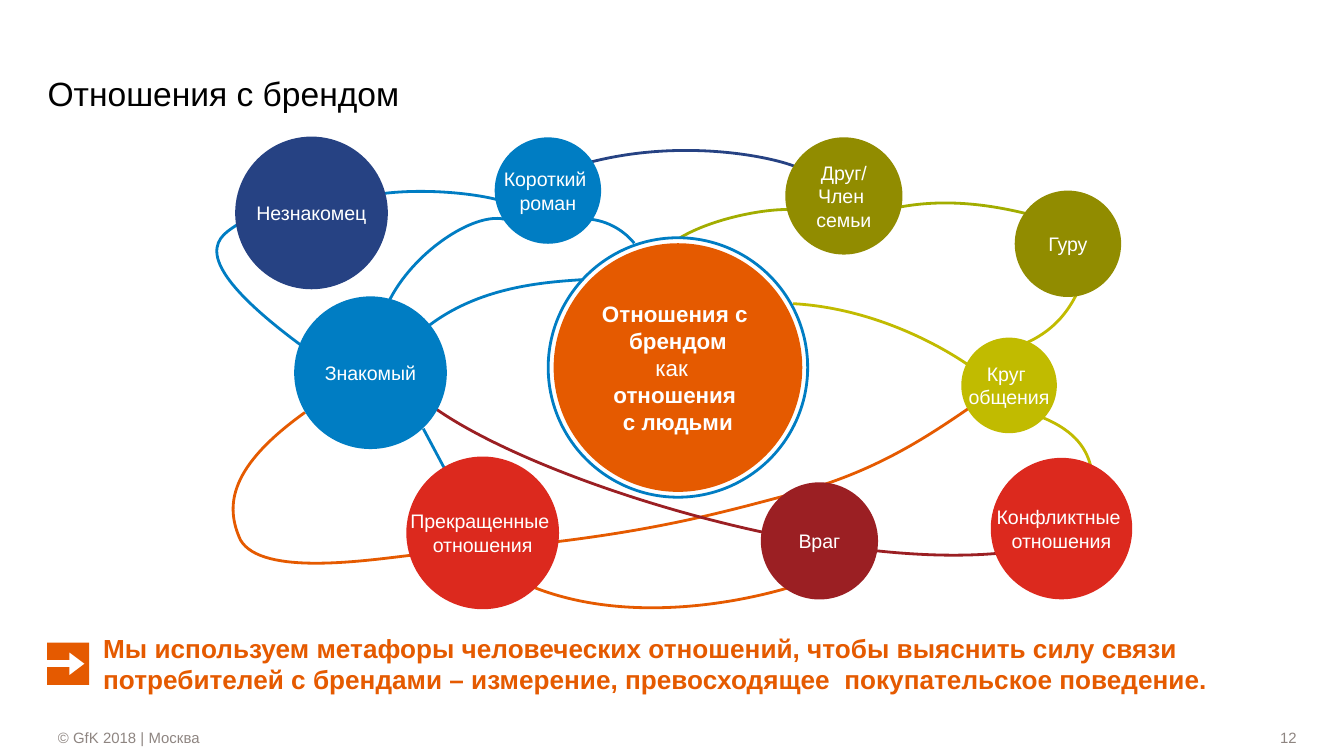
import pptx
import pptx.util
import pptx.dml.color
import pptx.enum.shapes
import pptx.enum.text
import pptx.oxml.ns
from dataclasses import dataclass
from lxml import etree

Pt = pptx.util.Pt
Shape = pptx.enum.shapes.MSO_SHAPE
Align = pptx.enum.text.PP_ALIGN
Anchor = pptx.enum.text.MSO_ANCHOR
qn = pptx.oxml.ns.qn


@dataclass(frozen=True)
class Theme:
    font: str = "Arial"
    white: str = "FFFFFF"
    black: str = "000000"
    grey: str = "8E8581"
    orange: str = "E55A00"
    navy: str = "264283"
    blue: str = "007DC3"
    red: str = "DC291E"
    maroon: str = "9B1F23"
    olive: str = "918C00"
    green: str = "A2AD00"
    lime: str = "C1BB00"
    title_size: float = 18
    message_size: float = 14
    hub_size: float = 12
    node_size: float = 10.5
    footer_size: float = 8
    curve_width: float = 1.5
    arrow_width: float = 4


THEME = Theme()

NODES = [
    ("Конфликтные \nотношения", 452.7, 211.2, 75.8, THEME.red),
    ("Гуру", 456.1, 58.6, 57, THEME.olive),
    ("Друг/\nЧлен \nсемьи", 336.1, 33, 62.8, THEME.olive),
    ("Враг", 323, 217.8, 62.8, THEME.maroon),
    ("Круг \nобщения", 424.6, 134.5, 51.2, THEME.lime),
    ("Прекращенные \nотношения", 142.6, 213.5, 81.8, THEME.red),
    ("Знакомый", 82.5, 127.7, 81.8, THEME.blue),
    ("Незнакомец", 50.9, 42.1, 81.8, THEME.navy),
    ("Короткий \nроман", 177.5, 30.1, 57, THEME.blue),
]

HUB_CENTER = (247.2, 124.9)
HUB_DIAMETER = 133.2
RING_DIAMETER = 139
HUB_RUNS = [
    ("Отношения с \nбрендом\n", True),
    ("как  \n", False),
    ("отношения \nс людьми", True),
]

CURVES = [
    (THEME.orange, [(47.4, 149), (7.1, 177.8), (4.2, 198.7), (12.9, 217.4),
                    (24.4, 236.9), (80.6, 228.2), (105, 225.4),
                    (221.7, 217.4), (263.4, 204.5), (315.3, 190.8),
                    (354.9, 179.3), (380.8, 162), (403.8, 146.2)]),
    (THEME.blue, [(45.3, 113), (-21.7, 63.4), (3.5, 54), (11.4, 48.2)]),
    (THEME.blue, [(89.2, 31.7), (112.2, 28.8), (138.9, 31.7), (151.8, 35.3)]),
    (THEME.blue, [(92.1, 90), (105, 63.4), (137.4, 41.8), (154, 45.4)]),
    (THEME.navy, [(199.4, 15.1), (248.3, 2.2), (295.8, 11.5), (310.2, 17.3)]),
    (THEME.blue, [(200.1, 45.4), (213, 46.8), (221, 54.7), (223.8, 58.3)]),
    (THEME.blue, [(112.2, 103.7), (140.3, 81.4), (175.6, 79.2), (196.5, 77.8)]),
    (THEME.blue, [(110.8, 157.7), (122.3, 179.3)]),
    (THEME.maroon, [(117.3, 146.9), (171.3, 185), (321.8, 232.6), (417.5, 224.6)]),
    (THEME.orange, [(169.8, 242.6), (221, 262.8), (280.7, 250.6), (307.4, 242.6)]),
    (THEME.lime, [(441.3, 151.2), (461.4, 159.1), (466.5, 169.9), (468.6, 178.6)]),
    (THEME.lime, [(308.8, 90.7), (349.1, 92.9), (384.4, 110.9), (403.1, 123.8)]),
    (THEME.lime, [(432.6, 112.3), (447.8, 105.8), (455.7, 95.8), (460.7, 85.7)]),
    (THEME.green, [(434.1, 42.5), (419, 38.9), (393.8, 33.8), (366.4, 38.9)]),
    (THEME.green, [(248.3, 55.4), (264.9, 45.4), (293, 39.6), (308.1, 40.3)]),
]


def rgb(color):
    return pptx.dml.color.RGBColor.from_string(color)


def add_text(paragraph, text, size, color, bold=False):
    for index, line in enumerate(text.split("\n")):
        if index:
            paragraph.add_line_break()
        if line:
            run = paragraph.add_run()
            run.text = line
            run.font.name = THEME.font
            run.font.size = Pt(size)
            run.font.bold = bold
            run.font.color.rgb = rgb(color)


def write(holder, runs, size, color, anchor, align=Align.LEFT, margins=(0, 0), wrap=True):
    frame = holder.text_frame
    frame.margin_left = frame.margin_right = Pt(margins[0])
    frame.margin_top = frame.margin_bottom = Pt(margins[1])
    frame.vertical_anchor = anchor
    frame.word_wrap = wrap
    paragraph = frame.paragraphs[0]
    paragraph.alignment = align
    for text, bold in runs:
        add_text(paragraph, text, size, color, bold)


def add_preset(slide, kind, box, fill=None, outline=None):
    preset = slide.shapes.add_shape(kind, *map(Pt, box))
    preset.shadow.inherit = False
    if fill:
        preset.fill.solid()
        preset.fill.fore_color.rgb = rgb(fill)
    else:
        preset.fill.background()
    if outline:
        preset.line.color.rgb = rgb(outline)
        preset.line.width = Pt(THEME.curve_width)
    else:
        preset.line.fill.background()
    return preset


def add_circle(slide, center, diameter, fill=None, outline=None):
    box = (center[0] - diameter / 2, center[1] - diameter / 2, diameter, diameter)
    return add_preset(slide, Shape.OVAL, box, fill, outline)


def add_node(slide, center, diameter, fill, runs, size):
    write(add_circle(slide, center, diameter, fill), runs, size, THEME.white,
          Anchor.MIDDLE, Align.CENTER, (0, 3.6), wrap=False)


def curve_bounds(controls, steps=60):
    points = [controls[0], controls[-1]]
    for first in range(0, len(controls) - 3, 3):
        for step in range(steps + 1):
            t = step / steps
            weights = ((1 - t) ** 3, 3 * t * (1 - t) ** 2, 3 * t * t * (1 - t), t ** 3)
            points.append([sum(w * p[axis] for w, p in zip(weights, controls[first:first + 4]))
                           for axis in (0, 1)])
    xs, ys = zip(*points)
    return min(xs), min(ys), max(xs), max(ys)


def bend(curve, controls):
    left, top, right, bottom = map(Pt, curve_bounds(controls))
    curve.left, curve.top = left, top
    curve.width, curve.height = right - left, bottom - top
    outline = next(curve.element.iter(qn("a:path")))
    outline.set("w", str(right - left))
    outline.set("h", str(bottom - top))
    for segment in list(outline):
        outline.remove(segment)
    for index, (x, y) in enumerate(controls):
        if index == 0:
            segment = etree.SubElement(outline, qn("a:moveTo"))
        elif index % 3 == 1:
            segment = etree.SubElement(outline, qn("a:cubicBezTo"))
        etree.SubElement(segment, qn("a:pt"), x=str(Pt(x) - left), y=str(Pt(y) - top))


def add_curve(slide, controls, color):
    points = [(Pt(x), Pt(y)) for x, y in controls]
    builder = slide.shapes.build_freeform(*points[0], scale=1.0)
    builder.add_line_segments(points[1:], close=False)
    curve = builder.convert_to_shape()
    if len(controls) > 2:
        bend(curve, controls)
    curve.shadow.inherit = False
    curve.fill.background()
    curve.line.color.rgb = rgb(color)
    curve.line.width = Pt(THEME.curve_width)


def relationship_map(slide, left, top):
    def place(point):
        return left + point[0], top + point[1]

    for color, controls in CURVES:
        add_curve(slide, [place(point) for point in controls], color)
    for text, x, y, diameter, fill in NODES:
        add_node(slide, place((x, y)), diameter, fill, [(text, False)], THEME.node_size)
    hub = place(HUB_CENTER)
    add_node(slide, hub, HUB_DIAMETER, THEME.orange, HUB_RUNS, THEME.hub_size)
    add_circle(slide, hub, RING_DIAMETER, outline=THEME.blue)


def title(slide, left, top, width, height):
    heading = slide.shapes.add_textbox(*map(Pt, (left, top, width, height)))
    write(heading, [("Отношения с брендом", False)], THEME.title_size, THEME.black,
          Anchor.BOTTOM)


def key_message(slide, left, top, width, height):
    text = ("Мы используем метафоры человеческих отношений, чтобы выяснить силу связи "
            "потребителей с брендами – измерение, превосходящее  покупательское поведение.")
    message = slide.shapes.add_textbox(*map(Pt, (left + 23, top, width - 23, height)))
    write(message, [(text, True)], THEME.message_size, THEME.orange, Anchor.MIDDLE,
          margins=(7.2, 3.6))
    side = 22.6
    middle = top + height / 2
    add_preset(slide, Shape.RECTANGLE, (left, middle - side / 2, side, side), THEME.orange)
    arrow = slide.shapes.add_connector(
        pptx.enum.shapes.MSO_CONNECTOR.STRAIGHT,
        *map(Pt, (left, middle, left + 20, middle)))
    arrow.line.color.rgb = rgb(THEME.white)
    arrow.line.width = Pt(THEME.arrow_width)
    etree.SubElement(arrow.element.spPr.find(qn("a:ln")), qn("a:tailEnd"),
                     type="triangle", w="med", len="sm")
    etree.SubElement(arrow.element.spPr, qn("a:effectLst"))


def footer(slide, left, top, width, height):
    notice_width, number_width = 555.8, 102.2
    for text, x, part_width, align in (
            ("12", left + width - number_width, number_width, Align.RIGHT),
            ("© GfK 2018 | Москва", left, notice_width, Align.LEFT)):
        part = add_preset(slide, Shape.RECTANGLE, (x, top, part_width, height), THEME.white)
        write(part, [(text, False)], THEME.footer_size, THEME.grey, Anchor.MIDDLE, align)


def main():
    deck = pptx.Presentation()
    deck.slide_width, deck.slide_height = Pt(720), Pt(405)
    slide = deck.slides.add_slide(deck.slide_layouts[6])
    footer(slide, 31, 389.5, 663.7, 11.5)
    title(slide, 25.5, 15, 615, 45.5)
    key_message(slide, 25.2, 338.6, 669.6, 34)
    relationship_map(slide, 116, 72)
    deck.save("out.pptx")


if __name__ == "__main__":
    main()
